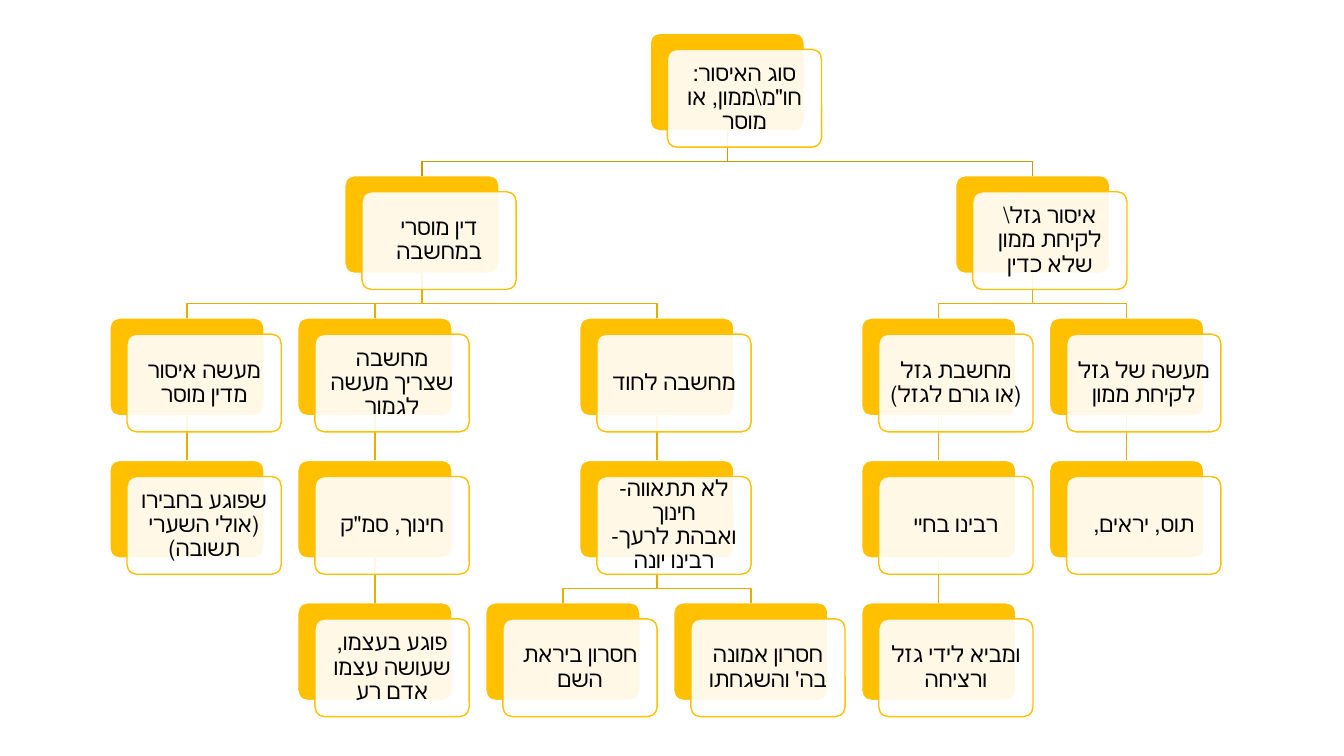
from dataclasses import dataclass, field
from itertools import count

import lxml.etree
import pptx
import pptx.dml.color
import pptx.enum.shapes
import pptx.enum.text
import pptx.oxml.ns
import pptx.util
from pptx.util import Inches

GOLD, WHITE, BLACK = "FFC000", "FFFFFF", "000000"
ROOT_BRANCH, LOWER_BRANCH = "CC9A00", "E7AE00"
CARD_WIDTH, CARD_HEIGHT = Inches(1.53), Inches(0.97)
CARD_SHIFT_X, CARD_SHIFT_Y = Inches(0.17), Inches(0.16)
FIRST_CENTER, COLUMN_STEP = Inches(1.09) + CARD_WIDTH // 2, Inches(9.32) // 5
FIRST_TOP, LEVEL_STEP = Inches(0.33), Inches(5.65) // 4
BEND_DROP = Inches(0.3)


@dataclass
class Topic:
    text: str
    children: list = field(default_factory=list)
    center: int = 0
    top: int = 0
    back_card: object = None


def topic_tree():
    """Topics with their children from left to right."""
    return Topic("סוג האיסור: חו\"מ\\ממון, או מוסר", [
        Topic("דין מוסרי במחשבה", [
            Topic("מעשה איסור מדין מוסר", [
                Topic("שפוגע בחבירו (אולי השערי תשובה)")]),
            Topic("מחשבה שצריך מעשה לגמור", [
                Topic("חינוך, סמ\"ק", [
                    Topic("פוגע בעצמו, שעושה עצמו אדם רע")])]),
            Topic("מחשבה לחוד", [
                Topic("לא תתאווה- חינוך\vואבהת לרעך- רבינו יונה", [
                    Topic("חסרון ביראת השם"),
                    Topic("חסרון אמונה בה' והשגחתו")])]),
        ]),
        Topic("איסור גזל\\ לקיחת ממון שלא כדין", [
            Topic("מחשבת גזל (או גורם לגזל)", [
                Topic("רבינו בחיי", [
                    Topic("ומביא לידי גזל ורציחה")])]),
            Topic("מעשה של גזל לקיחת ממון", [
                Topic("תוס, יראים,")]),
        ]),
    ])


def place(topic, columns, level=0):
    """Give each leaf its own column and centre each parent over its children."""
    topic.top = FIRST_TOP + level * LEVEL_STEP
    for child in topic.children:
        place(child, columns, level + 1)
    if topic.children:
        topic.center = (topic.children[0].center + topic.children[-1].center) // 2
    else:
        topic.center = FIRST_CENTER + next(columns) * COLUMN_STEP


def walk(topic):
    yield topic
    for child in topic.children:
        yield from walk(child)


def rgb(hex_color):
    return pptx.dml.color.RGBColor.from_string(hex_color)


def set_line(shape, color):
    shape.line.color.rgb = rgb(color)
    shape.line.width = pptx.util.Pt(1)


def add_card(slide, left, top, fill, outline):
    card = slide.shapes.add_shape(
        pptx.enum.shapes.MSO_SHAPE.ROUNDED_RECTANGLE, left, top, CARD_WIDTH, CARD_HEIGHT)
    card.adjustments[0] = 0.1
    card.shadow.inherit = False
    card.fill.solid()
    card.fill.fore_color.rgb = rgb(fill)
    set_line(card, outline)
    return card


def add_back_card(slide, topic):
    topic.back_card = add_card(slide, topic.center - CARD_WIDTH // 2, topic.top, GOLD, WHITE)


def add_front_card(slide, topic):
    card = add_card(slide, topic.center - CARD_WIDTH // 2 + CARD_SHIFT_X,
                    topic.top + CARD_SHIFT_Y, WHITE, GOLD)
    qn = pptx.oxml.ns.qn
    fill_color = card._element.spPr.find(qn("a:solidFill")).find(qn("a:srgbClr"))
    lxml.etree.SubElement(fill_color, qn("a:alpha"), val="90000")

    frame = card.text_frame
    frame_format = {"word_wrap": True, "vertical_anchor": pptx.enum.text.MSO_ANCHOR.MIDDLE}
    frame_format |= {f"margin_{side}": Inches(0.07)
                     for side in ("left", "right", "top", "bottom")}
    for name, value in frame_format.items():
        setattr(frame, name, value)

    paragraph = frame.paragraphs[0]
    paragraph.text = topic.text
    paragraph.alignment = pptx.enum.text.PP_ALIGN.CENTER
    paragraph.line_spacing = 0.9
    paragraph._p.get_or_add_pPr().set("rtl", "1")
    for run in paragraph.runs:
        run.font.size = pptx.util.Pt(16)
        run.font.name = "Calibri"
        run.font.color.rgb = rgb(BLACK)
        run._r.get_or_add_rPr().set("lang", "he-IL")


def add_straight_branch(slide, parent, child, color):
    branch = slide.shapes.add_connector(
        pptx.enum.shapes.MSO_CONNECTOR.STRAIGHT,
        parent.center, parent.top + CARD_HEIGHT, child.center, child.top)
    branch.begin_connect(parent.back_card, 2)
    branch.end_connect(child.back_card, 0)
    set_line(branch, color)
    lxml.etree.SubElement(branch._element.spPr, pptx.oxml.ns.qn("a:effectLst"))


def add_bent_branch(slide, parent, child, color):
    start = parent.top + CARD_HEIGHT
    bend = start + BEND_DROP
    outline = slide.shapes.build_freeform(parent.center, start)
    outline.add_line_segments(
        [(parent.center, bend), (child.center, bend), (child.center, child.top)], close=False)
    branch = outline.convert_to_shape()
    branch.shadow.inherit = False
    branch.fill.background()
    set_line(branch, color)


def main():
    deck = pptx.Presentation()
    deck.slide_width, deck.slide_height = Inches(13.33), Inches(7.5)
    slide = deck.slides.add_slide(deck.slide_layouts[6])

    root = topic_tree()
    place(root, count())
    topics = list(walk(root))
    for topic in topics:
        add_back_card(slide, topic)
    for topic in topics:
        color = ROOT_BRANCH if topic is root else LOWER_BRANCH
        add_branch = add_straight_branch if len(topic.children) == 1 else add_bent_branch
        for child in topic.children:
            add_branch(slide, topic, child, color)
    for topic in topics:
        add_front_card(slide, topic)
    deck.save("out.pptx")


if __name__ == "__main__":
    main()
